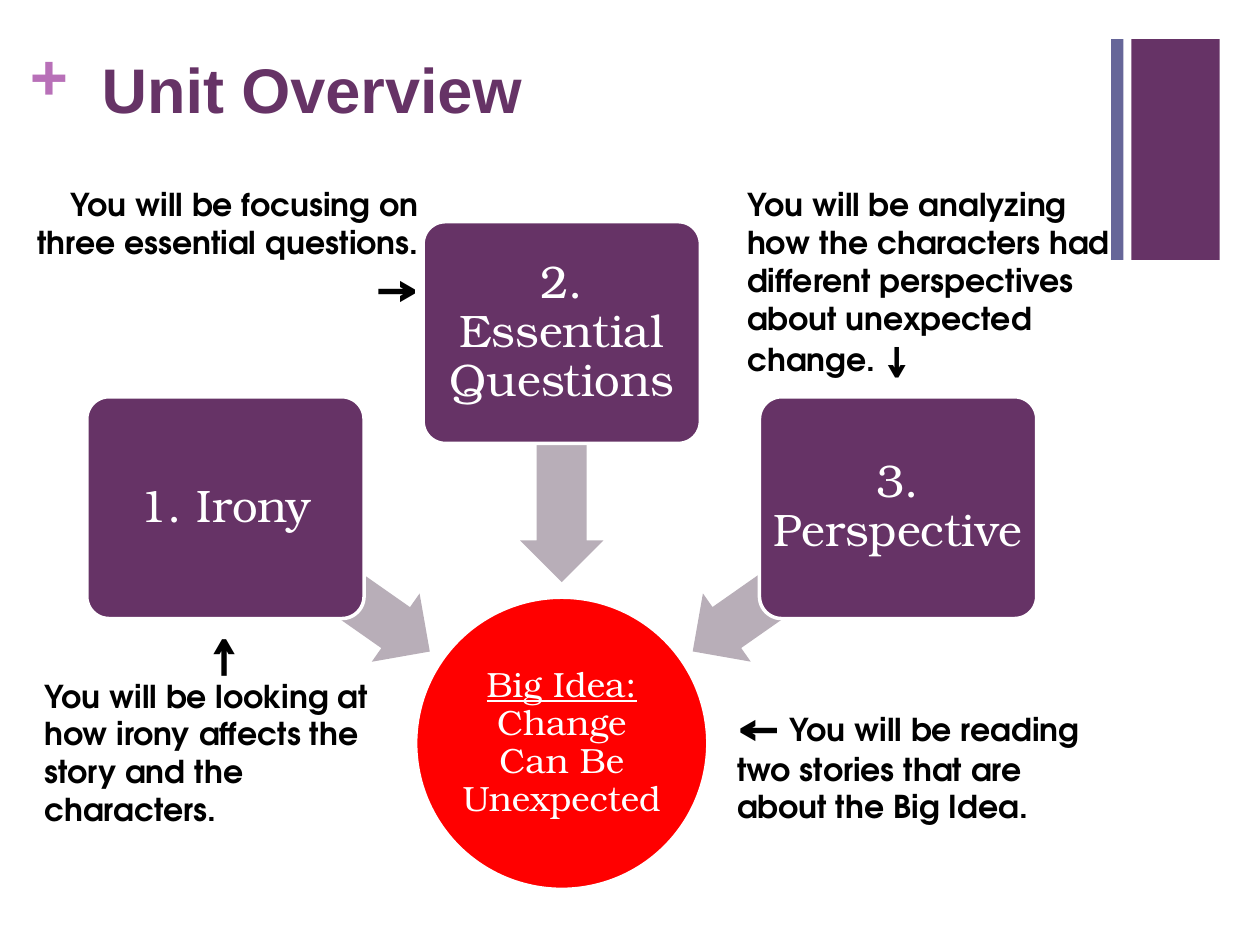
from dataclasses import dataclass

import pptx
import pptx.dml.color
import pptx.enum.shapes
import pptx.enum.text
import pptx.util

Cm = pptx.util.Cm
Pt = pptx.util.Pt
RGBColor = pptx.dml.color.RGBColor
Shape = pptx.enum.shapes.MSO_SHAPE
Align = pptx.enum.text.PP_ALIGN
Anchor = pptx.enum.text.MSO_ANCHOR

PURPLE = RGBColor(0x66, 0x33, 0x66)
SLATE = RGBColor(0x66, 0x66, 0x99)
ORCHID = RGBColor(0xB8, 0x70, 0xB8)
MAUVE = RGBColor(0xB8, 0xAE, 0xB8)
RED = RGBColor(0xFF, 0, 0)
WHITE = RGBColor(0xFF, 0xFF, 0xFF)
BLACK = RGBColor(0, 0, 0)
SERIF, SANS, TITLE_FONT = "TeX Gyre Bonum", "TeX Gyre Adventor", "Arial"


@dataclass
class Area:
    left: float
    top: float
    width: float
    height: float

    def lengths(self) -> tuple:
        return Cm(self.left), Cm(self.top), Cm(self.width), Cm(self.height)


@dataclass
class Span:
    text: str
    size: float
    bold: bool = False
    underline: bool = False


@dataclass
class Topic:
    text: str
    box_top: float
    arrow_left: float
    arrow_top: float
    rotation: float


@dataclass
class Note:
    area: Area
    paragraphs: list[list[Span]]
    align: Align = Align.LEFT
    first_indent: float = 0


TOPICS = [
    Topic("1. Irony", 8.0, 4.09, 10.85, 215),
    Topic("2. Essential Questions", 4.47, 8.81, 8.38, 270),
    Topic("3. Perspective", 8.0, 13.51, 10.85, 325),
]
FIRST_BOX_LEFT, BOX_PITCH = 1.75, 6.78

NOTES = [
    Note(Area(14.61, 13.97, 7.62, 2.82), [[
        Span("←", 24, True), Span(" ", 18),
        Span("You will be reading two stories that are about the Big Idea.", 18, True)]]),
    Note(Area(0.64, 12.5, 7.19, 4.37), [
        [Span("↑", 24, True)],
        [Span("You will be looking at how irony affects the story and the characters.", 18, True)]],
        first_indent=3.35),
    Note(Area(14.81, 3.61, 7.82, 4.19), [[
        Span("You will be analyzing how the characters had different perspectives "
             "about unexpected change.", 18, True),
        Span(" ↓", 20, True)]]),
    Note(Area(0.43, 3.61, 8.26, 2.82), [[
        Span("You will be focusing on three essential questions. ", 18, True),
        Span("→", 24, True)]], Align.RIGHT),
]


def set_margins(frame, horizontal: float, vertical: float) -> None:
    frame.margin_left = frame.margin_right = Cm(horizontal)
    frame.margin_top = frame.margin_bottom = Cm(vertical)


def write_spans(para, spans: list[Span], font_name: str, color: RGBColor) -> None:
    for span in spans:
        run = para.add_run()
        run.text = span.text
        run.font.name = font_name
        run.font.size = Pt(span.size)
        run.font.bold = span.bold
        run.font.underline = span.underline
        run.font.color.rgb = color


def add_figure(page, kind: Shape, area: Area, fill: RGBColor, outlined: bool = False):
    figure = page.shapes.add_shape(kind, *area.lengths())
    figure.shadow.inherit = False
    figure.fill.solid()
    figure.fill.fore_color.rgb = fill
    if outlined:
        figure.line.color.rgb = WHITE
        figure.line.width = Pt(2)
    else:
        figure.line.fill.background()
    return figure


def write_label(figure, spans: list[Span], margin: float) -> None:
    frame = figure.text_frame
    frame.word_wrap = True
    frame.vertical_anchor = Anchor.MIDDLE
    set_margins(frame, margin, margin)
    para = frame.paragraphs[0]
    para.alignment = Align.CENTER
    para.line_spacing = 0.9
    write_spans(para, spans, SERIF, WHITE)


def add_topic(page, topic: Topic, box_left: float) -> None:
    """Draw the arrow towards the big idea, then the box over its tail."""
    arrow = add_figure(page, Shape.LEFT_ARROW,
                       Area(topic.arrow_left, topic.arrow_top, 5.03, 1.68), MAUVE)
    arrow.adjustments[0] = 0.6
    arrow.adjustments[1] = 0.5
    arrow.rotation = topic.rotation
    box = add_figure(page, Shape.ROUNDED_RECTANGLE,
                     Area(box_left, topic.box_top, 5.59, 4.47), PURPLE, outlined=True)
    box.adjustments[0] = 0.1
    write_label(box, [Span(topic.text, 26)], 0.13)


def add_note(page, note: Note) -> None:
    frame = page.shapes.add_textbox(*note.area.lengths()).text_frame
    frame.word_wrap = True
    for index, spans in enumerate(note.paragraphs):
        para = frame.add_paragraph() if index else frame.paragraphs[0]
        para.alignment = note.align
        write_spans(para, spans, SANS, BLACK)
    if note.first_indent:
        properties = frame.paragraphs[0]._p.get_or_add_pPr()
        properties.set("marL", str(int(Cm(note.first_indent))))


def add_heading(page) -> None:
    add_figure(page, Shape.RECTANGLE, Area(22.81, 0.79, 1.78, 4.45), PURPLE)
    add_figure(page, Shape.RECTANGLE, Area(22.4, 0.79, 0.25, 4.45), SLATE)
    plus = page.shapes.add_textbox(*Area(0.61, 0.64, 0.74, 1.55).lengths()).text_frame
    set_margins(plus, 0, 0)
    write_spans(plus.paragraphs[0], [Span("+", 36, True)], SERIF, ORCHID)

    title = page.shapes.title
    title.left, title.top, title.width, title.height = Area(1.8, 0.89, 19.56, 1.65).lengths()
    frame = title.text_frame
    frame.vertical_anchor = Anchor.BOTTOM
    set_margins(frame, 0.25, 0)
    frame.paragraphs[0].alignment = Align.LEFT
    write_spans(frame.paragraphs[0], [Span("Unit Overview", 36, True)], TITLE_FONT, PURPLE)


def main() -> None:
    deck = pptx.Presentation()
    deck.slide_width, deck.slide_height = Cm(25.4), Cm(19.05)
    page = deck.slides.add_slide(deck.slide_layouts.get_by_name("Title Only"))
    add_heading(page)
    big_idea = add_figure(page, Shape.OVAL, Area(8.38, 12.04, 5.89, 5.89), RED, outlined=True)
    write_label(big_idea, [Span("Big Idea: ", 20, underline=True),
                           Span("Change Can Be Unexpected", 20)], 0.03)
    for index, topic in enumerate(TOPICS):
        add_topic(page, topic, FIRST_BOX_LEFT + index * BOX_PITCH)
    for note in NOTES:
        add_note(page, note)
    deck.save("out.pptx")


if __name__ == "__main__":
    main()
